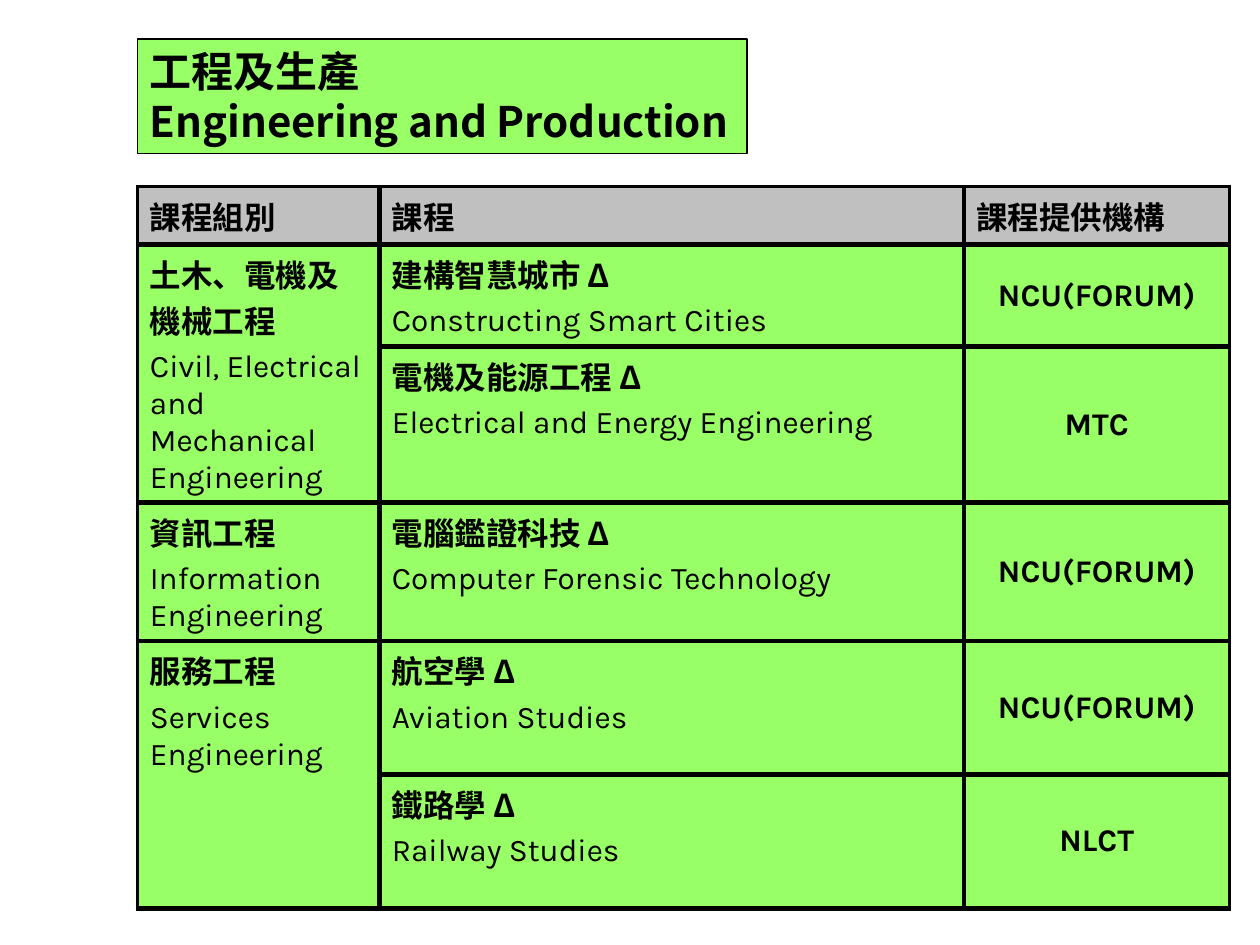
from dataclasses import dataclass

from lxml.etree import SubElement
from pptx import Presentation
from pptx.dml.color import RGBColor
from pptx.enum.shapes import MSO_SHAPE
from pptx.enum.text import MSO_ANCHOR, MSO_AUTO_SIZE, PP_ALIGN
from pptx.oxml import parse_xml
from pptx.oxml.ns import nsdecls, qn
from pptx.util import Pt

BLACK = RGBColor(0x00, 0x00, 0x00)
GREY = RGBColor(0xC0, 0xC0, 0xC0)
GREEN = RGBColor(0x99, 0xFF, 0x66)
CJK, LATIN = "Noto Sans CJK SC", "Karla"

LEFT = 78.48
COL_WIDTHS = (138.24, 334.08, 151.92)
ROW_HEIGHTS = (28.8, 58.32, 61.2, 76.32, 76.32, 76.32)
INNER, OUTER = 3, 2.25
HEADERS = ("課程組別", "課程", "課程提供機構")


@dataclass(frozen=True)
class Course:
    chinese: str
    english: str
    provider: str


@dataclass(frozen=True)
class Group:
    chinese: str
    english: str
    courses: tuple[Course, ...]


GROUPS = (
    Group("土木、電機及機械工程", "Civil, Electrical and Mechanical Engineering", (
        Course("建構智慧城市 Δ", "Constructing Smart Cities", "NCU(FORUM)"),
        Course("電機及能源工程 Δ", "Electrical and Energy Engineering", "MTC"),
    )),
    Group("資訊工程", "Information Engineering", (
        Course("電腦鑑證科技 Δ", "Computer Forensic Technology", "NCU(FORUM)"),
    )),
    Group("服務工程", "Services Engineering", (
        Course("航空學 Δ", "Aviation Studies", "NCU(FORUM)"),
        Course("鐵路學 Δ", "Railway Studies", "NLCT"),
    )),
)


def format_run(r, size: float, name: str, bold: bool) -> None:
    r.font.size, r.font.bold = Pt(size), bold
    r.font.color.rgb = BLACK
    r.font.name = name
    SubElement(r.font._element, qn("a:ea")).set("typeface", name)


def space_before(p, percent: int) -> None:
    """Set paragraph spacing relative to the text size."""
    p._p.get_or_add_pPr().insert(0, parse_xml(
        f'<a:spcBef {nsdecls("a")}><a:spcPct val="{percent * 1000}"/></a:spcBef>'))


def set_borders(cell, left: float, right: float, top: float, bottom: float) -> None:
    tc_pr = cell._tc.get_or_add_tcPr()
    for i, (side, width) in enumerate(zip("LRTB", (left, right, top, bottom))):
        tc_pr.insert(i, parse_xml(
            f'<a:ln{side} {nsdecls("a")} w="{Pt(width)}"><a:solidFill>'
            f'<a:srgbClr val="{BLACK}"/></a:solidFill></a:ln{side}>'))


def write_cell(cell, lines: list[tuple[str, str, bool]], middle: bool = False,
               align: PP_ALIGN = PP_ALIGN.LEFT) -> None:
    """Fill a cell with paragraphs given as text, font name and bold."""
    cell.vertical_anchor = MSO_ANCHOR.MIDDLE if middle else MSO_ANCHOR.TOP
    tf = cell.text_frame
    tf.text = "\n".join(text for text, _, _ in lines)
    for p, (_, name, bold) in zip(tf.paragraphs, lines):
        p.alignment = align
        space_before(p, 20)
        format_run(p.runs[0], 18, name, bold)


def bilingual(item: Group | Course) -> list[tuple[str, str, bool]]:
    return [(item.chinese, CJK, True), (item.english, LATIN, False)]


def add_title(s) -> None:
    sp = s.shapes.add_shape(MSO_SHAPE.RECTANGLE, Pt(LEFT), Pt(22.32), Pt(348.48), Pt(65.52))
    sp.shadow.inherit = False
    sp.fill.solid()
    sp.fill.fore_color.rgb = GREEN
    sp.line.color.rgb, sp.line.width = BLACK, Pt(0.75)
    tf = sp.text_frame
    tf.word_wrap = True
    tf.auto_size = MSO_AUTO_SIZE.SHAPE_TO_FIT_TEXT
    tf.vertical_anchor = MSO_ANCHOR.TOP
    tf.text = "工程及生產\nEngineering and Production"
    for p in tf.paragraphs:
        p.alignment = PP_ALIGN.LEFT
        format_run(p.runs[0], 24, CJK, True)


def add_course_table(s) -> None:
    rows, cols = len(ROW_HEIGHTS), len(COL_WIDTHS)
    table = s.shapes.add_table(rows, cols, Pt(LEFT), Pt(106.56),
                               Pt(sum(COL_WIDTHS)), Pt(sum(ROW_HEIGHTS))).table
    table.first_row = table.horz_banding = False
    for column, width in zip(table.columns, COL_WIDTHS):
        column.width = Pt(width)
    for row, height in zip(table.rows, ROW_HEIGHTS):
        row.height = Pt(height)

    for i in range(rows):
        for j in range(cols):
            cell = table.cell(i, j)
            cell.fill.solid()
            cell.fill.fore_color.rgb = GREEN if i else GREY
            set_borders(cell, INNER if j else OUTER, INNER if j < cols - 1 else OUTER,
                        INNER if i else OUTER, INNER)

    for j, header in enumerate(HEADERS):
        write_cell(table.cell(0, j), [(header, CJK, True)], middle=True)
    i = 1
    for group in GROUPS:
        first = table.cell(i, 0)
        if len(group.courses) > 1:
            first.merge(table.cell(i + len(group.courses) - 1, 0))
        write_cell(first, bilingual(group))
        for course in group.courses:
            write_cell(table.cell(i, 1), bilingual(course))
            write_cell(table.cell(i, 2), [(course.provider, LATIN, True)],
                       middle=True, align=PP_ALIGN.CENTER)
            i += 1


def main() -> None:
    prs = Presentation()
    prs.slide_width, prs.slide_height = Pt(720), Pt(540)
    s = prs.slides.add_slide(prs.slide_layouts[6])
    add_course_table(s)
    add_title(s)
    prs.save("out.pptx")


if __name__ == "__main__":
    main()
